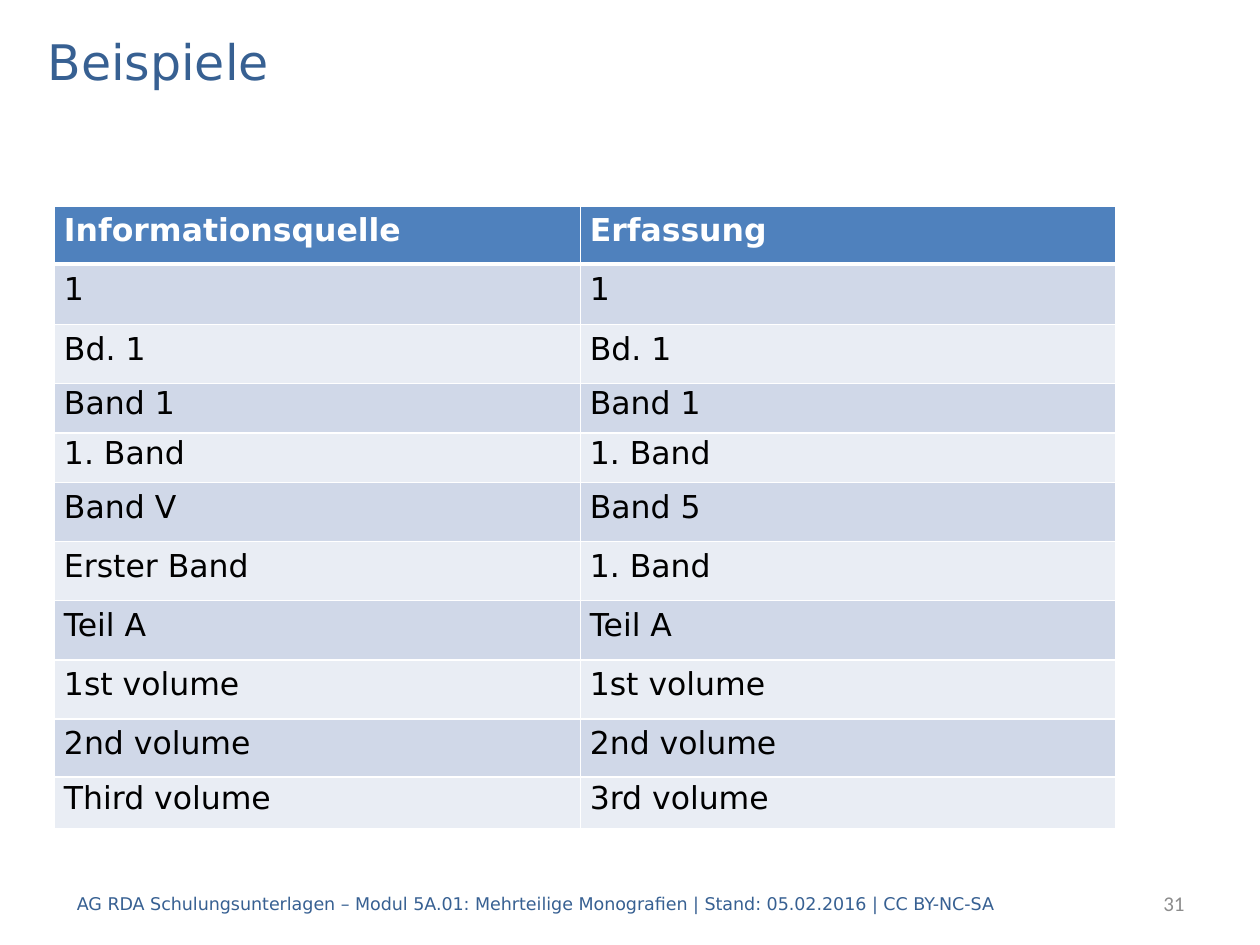
import pptx
import pptx.util
from dataclasses import dataclass
from lxml import etree
from pptx.dml.color import RGBColor
from pptx.enum.text import MSO_ANCHOR, PP_ALIGN
from pptx.oxml.ns import qn
from pptx.util import Cm, Pt


@dataclass(frozen=True)
class Theme:
    sans: str = "DejaVu Sans"
    number_font: str = "Calibri"
    blue: str = "376092"
    grey: str = "8C8C8C"
    black: str = "000000"
    white: str = "FFFFFF"
    header: str = "4F81BD"
    bands: tuple = ("D0D8E8", "E9EDF4")
    title_size: int = 28
    table_size: int = 18
    number_size: int = 12
    footer_size: int = 10
    rule: int = 1
    header_rule: int = 3


THEME = Theme()

ROWS = [
    ("Informationsquelle", "Erfassung"),
    ("1", "1"),
    ("Bd. 1", "Bd. 1"),
    ("Band 1", "Band 1"),
    ("1. Band", "1. Band"),
    ("Band V", "Band 5"),
    ("Erster Band", "1. Band"),
    ("Teil A", "Teil A"),
    ("1st volume", "1st volume"),
    ("2nd volume", "2nd volume"),
    ("Third volume", "3rd volume"),
]
COL_WIDTHS = (10.6, 10.8)
ROW_HEIGHTS = (1.17, 1.22, 1.19, 1, 1, 1.19, 1.19, 1.19, 1.19, 1.17, 1.04)


def set_all(obj, values):
    for name, value in values.items():
        setattr(obj, name, value)


def write(tf, text, color, size, font=THEME.sans, bold=False, **paragraph):
    """Put one formatted run into the first paragraph of a text frame."""
    p = tf.paragraphs[0]
    set_all(p, paragraph)
    r = p.add_run()
    r.text = text
    set_all(r.font, {"name": font, "size": Pt(size), "bold": bold})
    r.font.color.rgb = RGBColor.from_string(color)


def add_text(s, box, text, color, size, **style):
    tf = s.shapes.add_textbox(*map(Cm, box)).text_frame
    set_all(tf, {"word_wrap": True, "vertical_anchor": MSO_ANCHOR.MIDDLE})
    write(tf, text, color, size, **style)


def set_borders(cell, widths):
    """Draw white cell borders; widths maps L, R, T, B to points."""
    tc_pr = cell._tc.get_or_add_tcPr()
    for side, width in widths.items():
        ln = etree.SubElement(tc_pr, qn(f"a:ln{side}"), w=str(Pt(width)))
        fill = etree.SubElement(ln, qn("a:solidFill"))
        etree.SubElement(fill, qn("a:srgbClr"), val=THEME.white)


def format_cell(cell, text, row):
    is_header = row == 0
    set_borders(cell, {
        "L": THEME.rule,
        "R": THEME.rule,
        "T": THEME.header_rule if row == 1 else THEME.rule,
        "B": THEME.header_rule if is_header else THEME.rule,
    })
    cell.fill.solid()
    fill = THEME.header if is_header else THEME.bands[(row - 1) % 2]
    cell.fill.fore_color.rgb = RGBColor.from_string(fill)
    set_all(cell, {"margin_left": Cm(0.19), "margin_right": Cm(0.19)})
    if is_header:
        write(cell.text_frame, text, THEME.white, THEME.table_size, bold=True)
        return
    set_all(cell, {"margin_top": 0, "margin_bottom": 0,
                   "vertical_anchor": MSO_ANCHOR.MIDDLE})
    write(cell.text_frame, text, THEME.black, THEME.table_size,
          line_spacing=Pt(16), space_before=Pt(6), space_after=Pt(6))


def add_examples_table(s, left, top):
    box = (left, top, sum(COL_WIDTHS), sum(ROW_HEIGHTS))
    table = s.shapes.add_table(len(ROWS), len(COL_WIDTHS), *map(Cm, box)).table
    for column, width in zip(table.columns, COL_WIDTHS):
        column.width = Cm(width)
    for i, (row, height) in enumerate(zip(table.rows, ROW_HEIGHTS)):
        row.height = Cm(height)
        for cell, text in zip(row.cells, ROWS[i]):
            format_cell(cell, text, i)


def add_footer(s, left, top, width, height):
    number_width = 4.04
    add_text(s, (left, top, 20.8, height),
             "AG RDA Schulungsunterlagen – Modul 5A.01: Mehrteilige Monografien"
             " | Stand: 05.02.2016 | CC BY-NC-SA",
             THEME.blue, THEME.footer_size)
    add_text(s, (left + width - number_width, top, number_width, height), "31",
             THEME.grey, THEME.number_size, font=THEME.number_font,
             alignment=PP_ALIGN.RIGHT)


def main():
    prs = pptx.Presentation()
    set_all(prs, {"slide_width": Cm(25.4), "slide_height": Cm(19.05)})
    s = prs.slides.add_slide(prs.slide_layouts[6])
    add_footer(s, 1.3, 17.7, 22.83, 1.02)
    add_examples_table(s, 1.1, 4.15)
    add_text(s, (0.71, 0.51, 24, 1.42), "Beispiele",
             THEME.blue, THEME.title_size)
    prs.save("out.pptx")


if __name__ == "__main__":
    main()
